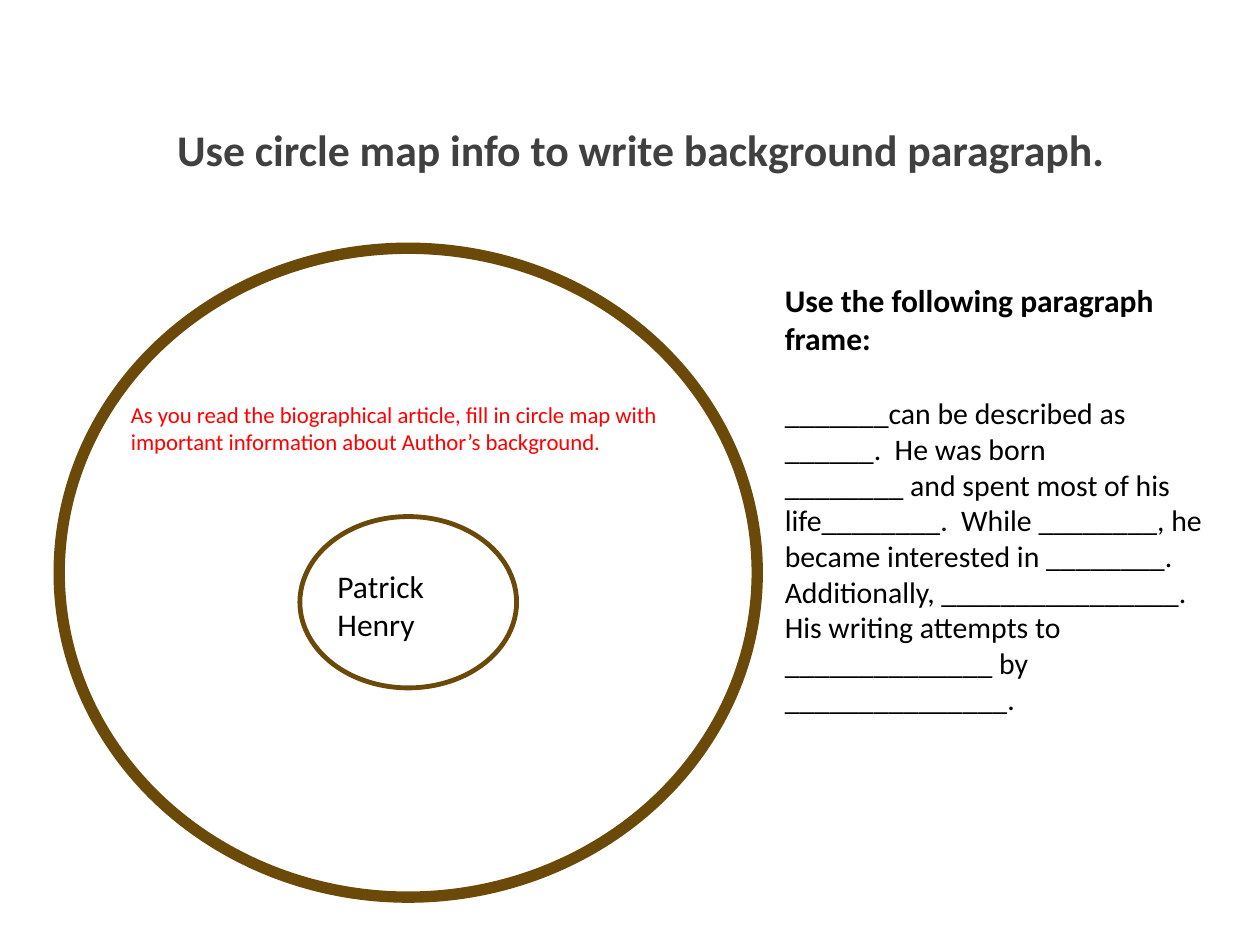
from pptx import Presentation
from pptx.dml.color import RGBColor
from pptx.enum.shapes import MSO_SHAPE as Preset
from pptx.enum.text import MSO_ANCHOR as Anchor, PP_ALIGN as Align
from pptx.util import Inches, Pt


def color(hex_value):
    return RGBColor.from_string(hex_value)


def apply(target, values):
    for name, value in values.items():
        setattr(target, name, value)


class CircleMapSlide:
    """Holds the style and the slide that its elements are added to."""

    font_name = "Calibri"
    ring_color = "6B4908"

    def __init__(self, deck):
        self.slide = deck.slides.add_slide(deck.slide_layouts[5])

    def fill_line(self, paragraph, wording, size, ink, bold=False):
        paragraph.text = wording
        apply(paragraph.font, {"name": self.font_name, "size": Pt(size), "bold": bold})
        paragraph.font.color.rgb = color(ink)

    def title(self, box, wording):
        heading = self.slide.shapes.title
        apply(heading, dict(zip(("left", "top", "width", "height"), map(Inches, box))))
        apply(heading.text_frame, {
            "vertical_anchor": Anchor.MIDDLE,
            "word_wrap": True,
            "margin_right": Inches(0.26),
        })
        line = heading.text_frame.paragraphs[0]
        self.fill_line(line, wording, 25, "404040", bold=True)
        apply(line, {"alignment": Align.CENTER, "line_spacing": Pt(52)})

    def ring(self, box, weight):
        ellipse = self.slide.shapes.add_shape(Preset.OVAL, *map(Inches, box))
        ellipse.shadow.inherit = False
        ellipse.fill.background()
        ellipse.line.color.rgb = color(self.ring_color)
        ellipse.line.width = Pt(weight)

    def text(self, box, lines, size, ink="000000", heading=None):
        frame = self.slide.shapes.add_textbox(*map(Inches, box)).text_frame
        frame.word_wrap = True
        paragraph = frame.paragraphs[0]
        if heading:
            self.fill_line(paragraph, heading, 18, ink, bold=True)
            paragraph.space_after = Pt(22)
            paragraph = frame.add_paragraph()
        for index, wording in enumerate(lines):
            if index:
                paragraph = frame.add_paragraph()
            self.fill_line(paragraph, wording, size, ink)


def main():
    deck = Presentation()
    apply(deck, {"slide_width": Inches(10), "slide_height": Inches(7.5)})
    circle_map = CircleMapSlide(deck)
    circle_map.title((1.19, 0.3, 7.95, 1.46), "Use circle map info to write background paragraph.")
    circle_map.ring((0.47, 1.97, 5.54, 5.15), 6.5)
    circle_map.ring((2.38, 4.1, 1.72, 1.36), 2.75)
    circle_map.text((2.58, 4.45, 1.53, 0.71), ["Patrick Henry"], 18)
    circle_map.text(
        (0.94, 3.13, 4.48, 0.54),
        ["As you read the biographical article, fill in circle map with "
         "important information about Author’s background."],
        13, "FF0000",
    )
    paragraph_frame = [
        "_______can be described as ______.  He was born",
        "________ and spent most of his life________.  While ________, "
        "he became interested in ________.",
        "Additionally, ________________.  His writing attempts to "
        "______________ by _______________.",
    ]
    circle_map.text(
        (6.13, 2.18, 3.61, 3.87), paragraph_frame, 17,
        heading="Use the following paragraph frame:",
    )
    deck.save("out.pptx")


if __name__ == "__main__":
    main()
